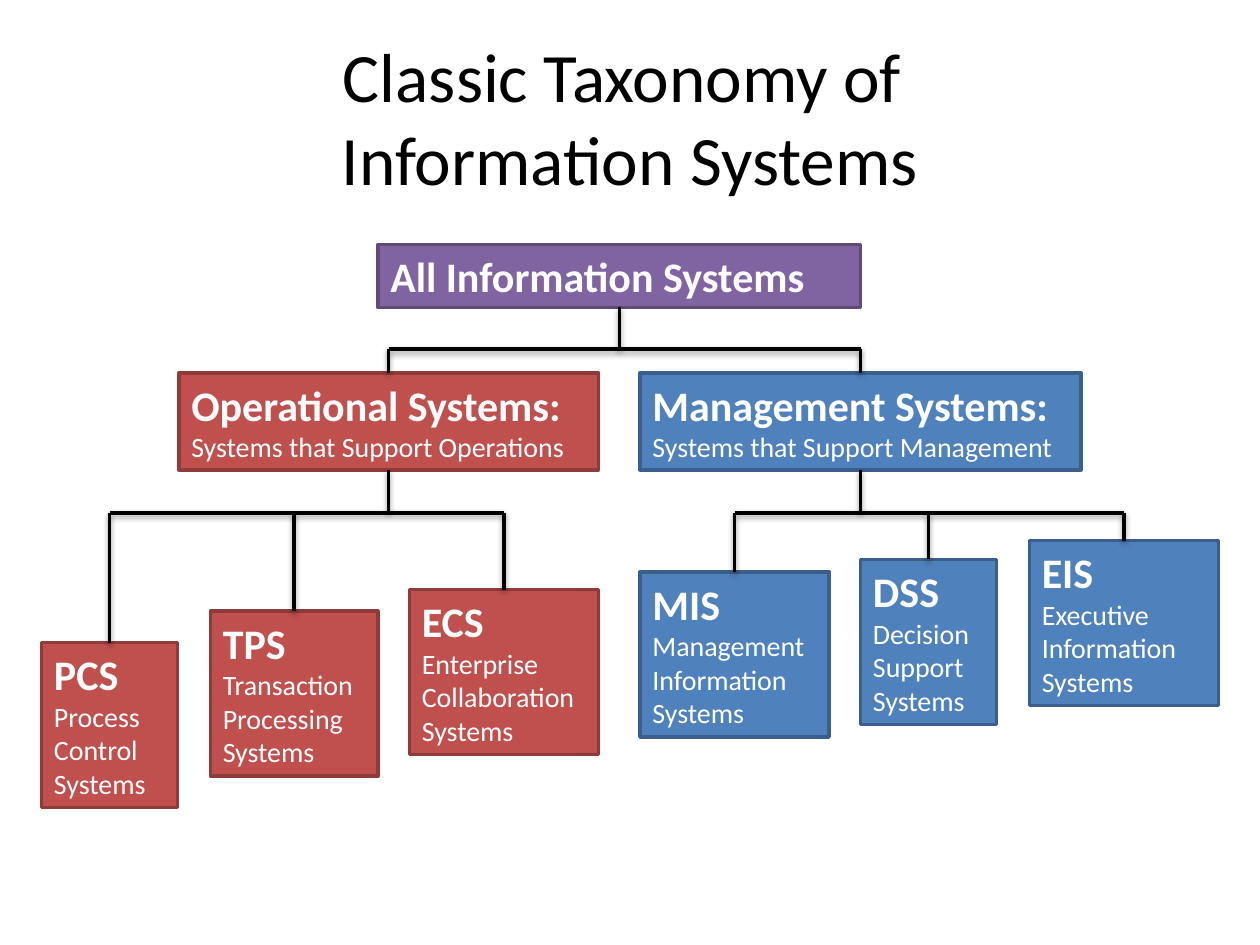
from copy import deepcopy

from lxml.etree import SubElement
from pptx import Presentation
from pptx.dml.color import RGBColor
from pptx.enum.shapes import MSO_CONNECTOR, MSO_SHAPE
from pptx.enum.text import MSO_ANCHOR, MSO_AUTO_SIZE, PP_ALIGN
from pptx.oxml.ns import qn
from pptx.util import Inches, Pt

COLORS = {
    "black": "000000",
    "white": "FFFFFF",
    "purple": "8064A2",
    "purple edge": "5F4A78",
    "red": "C0504D",
    "red edge": "8E3B39",
    "blue": "4F81BD",
    "blue edge": "3A5F8C",
}
TITLE = {"size": Pt(39.6), "name": "Calibri", "bold": False}
HEADING = {"size": Pt(24), "name": "Calibri", "bold": True}
DETAIL = {"size": Pt(16), "name": "Calibri", "bold": False}
TOP, LEFT, BOTTOM, RIGHT = 0, 1, 2, 3
UPPER_BUS, LOWER_BUS = 2.77, 4.07

ROOT = ("purple", (3, 1.94, 3.83, 0.5), ["All Information Systems"])
BRANCHES = [
    (
        ("red", (1.42, 2.96, 3.33, 0.77),
         ["Operational Systems:", "Systems that Support Operations"]),
        [
            ("red", (0.33, 5.1, 1.08, 1.31), ["PCS", "Process\vControl", "Systems"]),
            ("red", (1.67, 4.85, 1.33, 1.31), ["TPS", "Transaction Processing", "Systems"]),
            ("red", (3.25, 4.68, 1.5, 1.31), ["ECS", "Enterprise\vCollaboration", "Systems"]),
        ],
    ),
    (
        ("blue", (5.08, 2.96, 3.5, 0.77),
         ["Management Systems:", "Systems that Support Management"]),
        [
            ("blue", (5.08, 4.54, 1.5, 1.31), ["MIS", "Management\vInformation", "Systems"]),
            ("blue", (6.83, 4.44, 1.08, 1.31), ["DSS", "Decision\vSupport", "Systems"]),
            ("blue", (8.17, 4.29, 1.5, 1.31), ["EIS", "Executive\vInformation", "Systems"]),
        ],
    ),
]


def color(name):
    """Return the named colour."""
    return RGBColor.from_string(COLORS[name])


def write(para, text, style, color_name, align):
    """Fill a paragraph with text, formatting its spans and line breaks alike."""
    para.text = text
    para.alignment = align
    for span in para.runs:
        for name, value in style.items():
            setattr(span.font, name, value)
        span.font.color.rgb = color(color_name)
    for line_break in para._p.findall(qn("a:br")):
        line_break.append(deepcopy(para.runs[0]._r.rPr))


def add_title(page, text):
    """Place and fill the title placeholder."""
    title = page.shapes.title
    place = {"left": 0.5, "top": 0.3, "width": 9, "height": 1.25}
    for name, value in place.items():
        setattr(title, name, Inches(value))
    frame = title.text_frame
    frame.auto_size = MSO_AUTO_SIZE.NONE
    frame.vertical_anchor = MSO_ANCHOR.MIDDLE
    write(frame.paragraphs[0], text, TITLE, "black", PP_ALIGN.CENTER)


def add_box(page, fill, place, lines):
    """Add a system box with a bold heading and plain detail lines."""
    box = page.shapes.add_shape(MSO_SHAPE.RECTANGLE, *map(Inches, place))
    box.shadow.inherit = False
    box.fill.solid()
    box.fill.fore_color.rgb = color(fill)
    box.line.color.rgb = color(f"{fill} edge")
    box.line.width = Pt(2)
    frame = box.text_frame
    frame.word_wrap = True
    frame.auto_size = MSO_AUTO_SIZE.SHAPE_TO_FIT_TEXT
    frame.vertical_anchor = MSO_ANCHOR.TOP
    for index, text in enumerate(lines):
        para = frame.add_paragraph() if index else frame.paragraphs[0]
        write(para, text, DETAIL if index else HEADING, "white", PP_ALIGN.LEFT)
    return box


def add_line(page, start_x, start_y, end_x, end_y):
    """Add a black line with a soft shadow below it."""
    line = page.shapes.add_connector(
        MSO_CONNECTOR.STRAIGHT, start_x, start_y, end_x, end_y
    )
    line.line.color.rgb = color("black")
    line.line.width = Pt(2)
    effects = SubElement(line._element.spPr, qn("a:effectLst"))
    shadow = SubElement(
        effects, qn("a:outerShdw"), blurRad="40000", dist="20000",
        dir="5400000", rotWithShape="0",
    )
    shade = SubElement(shadow, qn("a:srgbClr"), val=COLORS["black"])
    SubElement(shade, qn("a:alpha"), val="38000")
    return line


def center_x(box):
    """Return the horizontal middle of a box."""
    return box.left + box.width // 2


def add_stem(page, box, side, bus_y):
    """Join the top or bottom of a box to a horizontal bus."""
    middle = center_x(box)
    edge = box.top if side == TOP else box.top + box.height
    add_line(page, middle, edge, middle, bus_y).begin_connect(box, side)


def add_tree(page, parent, children, bus):
    """Link a parent box to its children through a horizontal bus."""
    bus_y = Inches(bus)
    add_stem(page, parent, BOTTOM, bus_y)
    for child in children:
        add_stem(page, child, TOP, bus_y)
    add_line(page, center_x(children[0]), bus_y, center_x(children[-1]), bus_y)


def main():
    """Build the taxonomy slide and save it."""
    deck = Presentation()
    deck.slide_width, deck.slide_height = Inches(10), Inches(7.5)
    page = deck.slides.add_slide(deck.slide_layouts[5])
    add_title(page, "Classic Taxonomy of \vInformation Systems")
    root = add_box(page, *ROOT)
    branches = [
        (add_box(page, *branch), [add_box(page, *leaf) for leaf in leaves])
        for branch, leaves in BRANCHES
    ]
    add_tree(page, root, [branch for branch, _ in branches], UPPER_BUS)
    for branch, leaves in branches:
        add_tree(page, branch, leaves, LOWER_BUS)
    deck.save("out.pptx")


if __name__ == "__main__":
    main()
